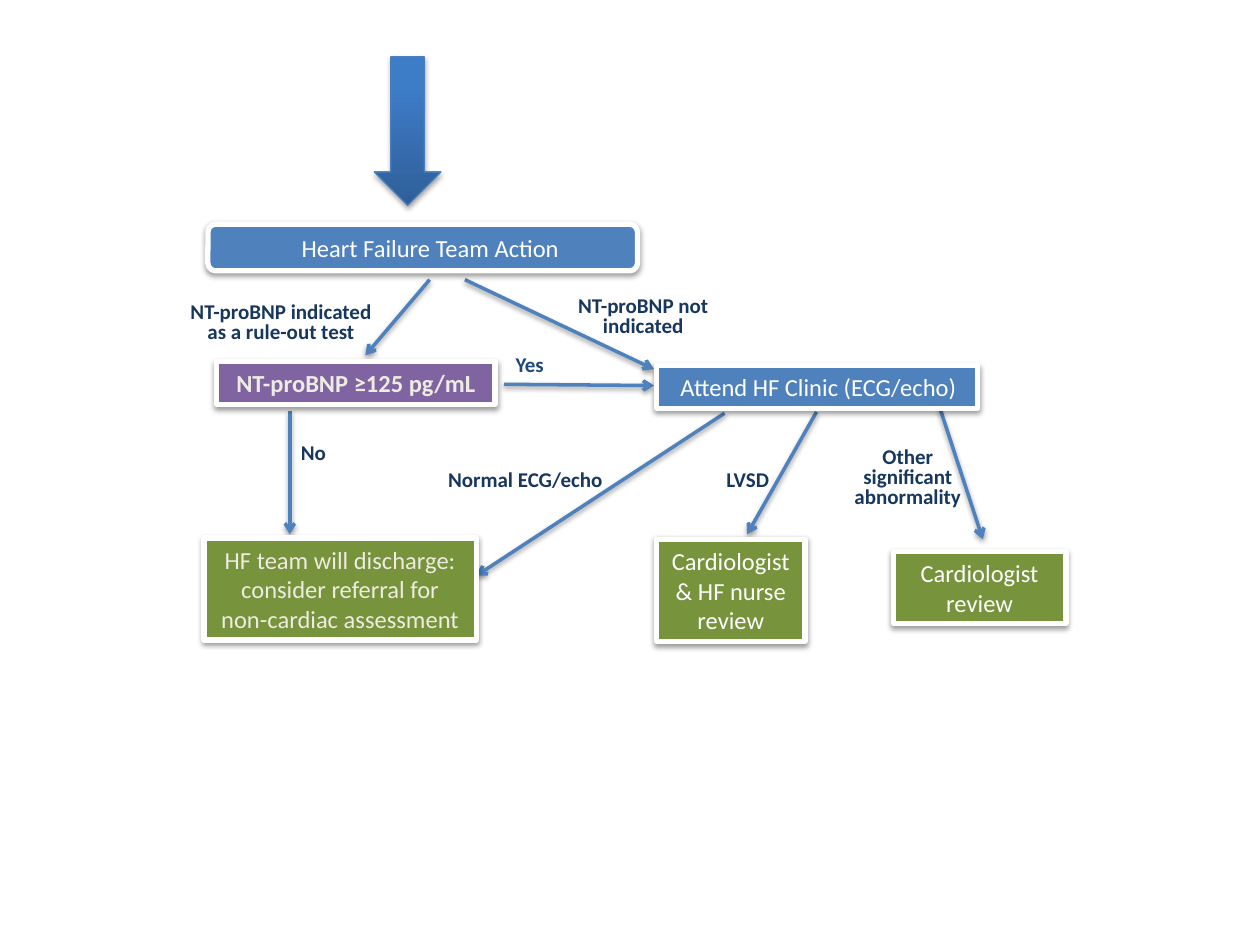
"""Build a flowchart slide of heart failure team actions."""
from dataclasses import dataclass

from lxml import etree
from pptx import Presentation
from pptx.dml.color import RGBColor
from pptx.enum.shapes import MSO_CONNECTOR, MSO_SHAPE
from pptx.enum.text import MSO_ANCHOR, MSO_AUTO_SIZE, PP_ALIGN
from pptx.oxml.ns import qn
from pptx.slide import Slide
from pptx.util import Emu, Inches, Pt

RECTANGLE = MSO_SHAPE.RECTANGLE
ROUNDED = MSO_SHAPE.ROUNDED_RECTANGLE
DOWN_ARROW = MSO_SHAPE.DOWN_ARROW
STRAIGHT = MSO_CONNECTOR.STRAIGHT
LEFT, CENTER = PP_ALIGN.LEFT, PP_ALIGN.CENTER
MIDDLE = MSO_ANCHOR.MIDDLE
GROW = MSO_AUTO_SIZE.SHAPE_TO_FIT_TEXT

WHITE = RGBColor(0xFF, 0xFF, 0xFF)
CREAM = RGBColor(0xEE, 0xEC, 0xE1)
BLUE = RGBColor(0x4F, 0x81, 0xBD)
PURPLE = RGBColor(0x80, 0x64, 0xA2)
GREEN = RGBColor(0x77, 0x93, 0x3C)
NAVY = RGBColor(0x17, 0x37, 0x5E)
MID_NAVY = RGBColor(0x1F, 0x49, 0x7D)
ENTRY_EDGE = RGBColor(0x4B, 0x7E, 0xBC)
ENTRY_DARK = RGBColor(0x2F, 0x5F, 0x99)
ENTRY_LIGHT = RGBColor(0x3D, 0x7C, 0xC7)

FONT = "Calibri"
SLIDE_WIDTH, SLIDE_HEIGHT = Inches(10), Inches(7.5)
COLUMNS, ROWS = 100, 75
COLUMN, ROW = SLIDE_WIDTH // COLUMNS, SLIDE_HEIGHT // ROWS


@dataclass(frozen=True)
class Area:
    """A rectangle in grid columns and rows."""
    column: float
    row: float
    columns: float
    rows: float

    def lengths(self) -> tuple[Emu, Emu, Emu, Emu]:
        """Return left, top, width and height."""
        return (Emu(round(self.column * COLUMN)), Emu(round(self.row * ROW)),
                Emu(round(self.columns * COLUMN)), Emu(round(self.rows * ROW)))


@dataclass(frozen=True)
class Step:
    """A filled box of the flowchart."""
    text: str
    area: Area
    fill: RGBColor
    ink: RGBColor = WHITE
    bold: bool = False
    outline: int = RECTANGLE
    align: int = CENTER
    indent: float = 0


@dataclass(frozen=True)
class Condition:
    """A bold label beside a route."""
    text: str
    area: Area
    ink: RGBColor = NAVY
    align: int = CENTER
    spacing: float = 0.8
    wrap: bool = True


@dataclass(frozen=True)
class Route:
    """An arrow between two grid points."""
    start: tuple[float, float]
    end: tuple[float, float]


ENTRY = Area(29.7, 4.5, 5.3, 11.8)

ROUTES = (
    Route((74.6, 32.4), (78, 42.8)),
    Route((64.8, 32.7), (59.3, 42.4)),
    Route((23, 32.6), (23, 42.4)),
    Route((40, 30.5), (51.9, 30.6)),
    Route((34.1, 22.2), (29, 28.2)),
    Route((36.9, 22.2), (51.9, 29.3)),
    Route((57.5, 32.8), (37.8, 45.7)),
)

STEPS = (
    Step("Heart Failure Team Action", Area(16.5, 17.8, 34.1, 3.7), BLUE,
         outline=ROUNDED, indent=1.2),
    Step("NT-proBNP ≥125 pg/mL", Area(17.2, 28.7, 22.1, 3.4), PURPLE, CREAM, bold=True),
    Step("Attend HF Clinic (ECG/echo)", Area(52.1, 29, 25.5, 3.4), BLUE,
         align=LEFT, indent=0.9),
    Step("HF team will discharge: consider referral for non-cardiac assessment",
         Area(16.2, 42.7, 21.6, 8.1), GREEN, CREAM),
    Step("Cardiologist & HF nurse review", Area(52.1, 42.8, 11.8, 8.1), GREEN),
    Step("Cardiologist review", Area(70.9, 43.8, 13.7, 5.7), GREEN),
)

CONDITIONS = (
    Condition("NT-proBNP indicated as a rule-out test", Area(13.7, 23.6, 17.2, 4.2)),
    Condition("NT-proBNP not indicated", Area(43.1, 23.1, 15.9, 4.2)),
    Condition("Yes", Area(39.9, 27.4, 4.3, 3), MID_NAVY, spacing=1, wrap=False),
    Condition("No", Area(22.9, 34.8, 12, 2.6), align=LEFT),
    Condition("Normal ECG/echo", Area(32, 36.9, 19.4, 2.7)),
    Condition("LVSD", Area(53, 36.9, 12.7, 2.6)),
    Condition("Other significant abnormality", Area(65.7, 35.1, 12.7, 5.9)),
)


def add_shadow(item, opacity: int = 38, distance: float = 1.6) -> None:
    """Give a shape or connector a soft shadow below it."""
    effects = etree.SubElement(item._element.spPr, qn("a:effectLst"))
    shadow = etree.SubElement(effects, qn("a:outerShdw"), blurRad=str(Pt(3.1)),
                              dist=str(Pt(distance)), dir="5400000", rotWithShape="0")
    black = etree.SubElement(shadow, qn("a:srgbClr"), val="000000")
    etree.SubElement(black, qn("a:alpha"), val=str(opacity * 1000))


def write(frame, text: str, size: int, ink: RGBColor, bold: bool, align: int):
    """Write one formatted paragraph and return it."""
    frame.auto_size = GROW
    paragraph = frame.paragraphs[0]
    paragraph.text = text
    paragraph.alignment = align
    font = paragraph.font
    font.name, font.size, font.bold = FONT, Pt(size), bold
    font.color.rgb = ink
    return paragraph


def draw_entry(slide: Slide, area: Area) -> None:
    """Draw the block arrow that leads into the chart."""
    entry = slide.shapes.add_shape(DOWN_ARROW, *area.lengths())
    entry.fill.gradient()
    entry.fill.gradient_angle = 90
    shades = ((0, ENTRY_DARK), (0.8, ENTRY_LIGHT))
    for stop, (position, shade) in zip(entry.fill.gradient_stops, shades):
        stop.position = position
        stop.color.rgb = shade
    entry.line.color.rgb = ENTRY_EDGE
    entry.line.width = Pt(0.75)
    add_shadow(entry, opacity=35, distance=1.8)


def draw_route(slide: Slide, route: Route) -> None:
    """Draw a line with an open arrowhead at its end."""
    points = [Emu(round(place * unit)) for point in (route.start, route.end)
              for place, unit in zip(point, (COLUMN, ROW))]
    connector = slide.shapes.add_connector(STRAIGHT, *points)
    connector.line.color.rgb = BLUE
    connector.line.width = Pt(2)
    stroke = connector._element.spPr.find(qn("a:ln"))
    etree.SubElement(stroke, qn("a:tailEnd"), type="arrow")
    add_shadow(connector)


def draw_step(slide: Slide, step: Step) -> None:
    """Draw a filled box with a white border."""
    box = slide.shapes.add_shape(step.outline, *step.area.lengths())
    box.fill.solid()
    box.fill.fore_color.rgb = step.fill
    box.line.color.rgb = WHITE
    box.line.width = Pt(3)
    add_shadow(box)
    frame = box.text_frame
    frame.word_wrap = True
    frame.vertical_anchor = MIDDLE
    frame.margin_left = Emu(round((1 + step.indent) * COLUMN))
    write(frame, step.text, 14, step.ink, step.bold, step.align)


def draw_condition(slide: Slide, condition: Condition) -> None:
    """Draw a label without a box."""
    frame = slide.shapes.add_textbox(*condition.area.lengths()).text_frame
    frame.word_wrap = condition.wrap
    paragraph = write(frame, condition.text, 12, condition.ink, True, condition.align)
    paragraph.line_spacing = condition.spacing


def main() -> None:
    """Build and save the slide."""
    deck = Presentation()
    deck.slide_width, deck.slide_height = SLIDE_WIDTH, SLIDE_HEIGHT
    slide = deck.slides.add_slide(deck.slide_layouts.get_by_name("Blank"))
    for route in ROUTES:
        draw_route(slide, route)
    for step in STEPS:
        draw_step(slide, step)
    for condition in CONDITIONS:
        draw_condition(slide, condition)
    draw_entry(slide, ENTRY)
    deck.save("out.pptx")


if __name__ == "__main__":
    main()
